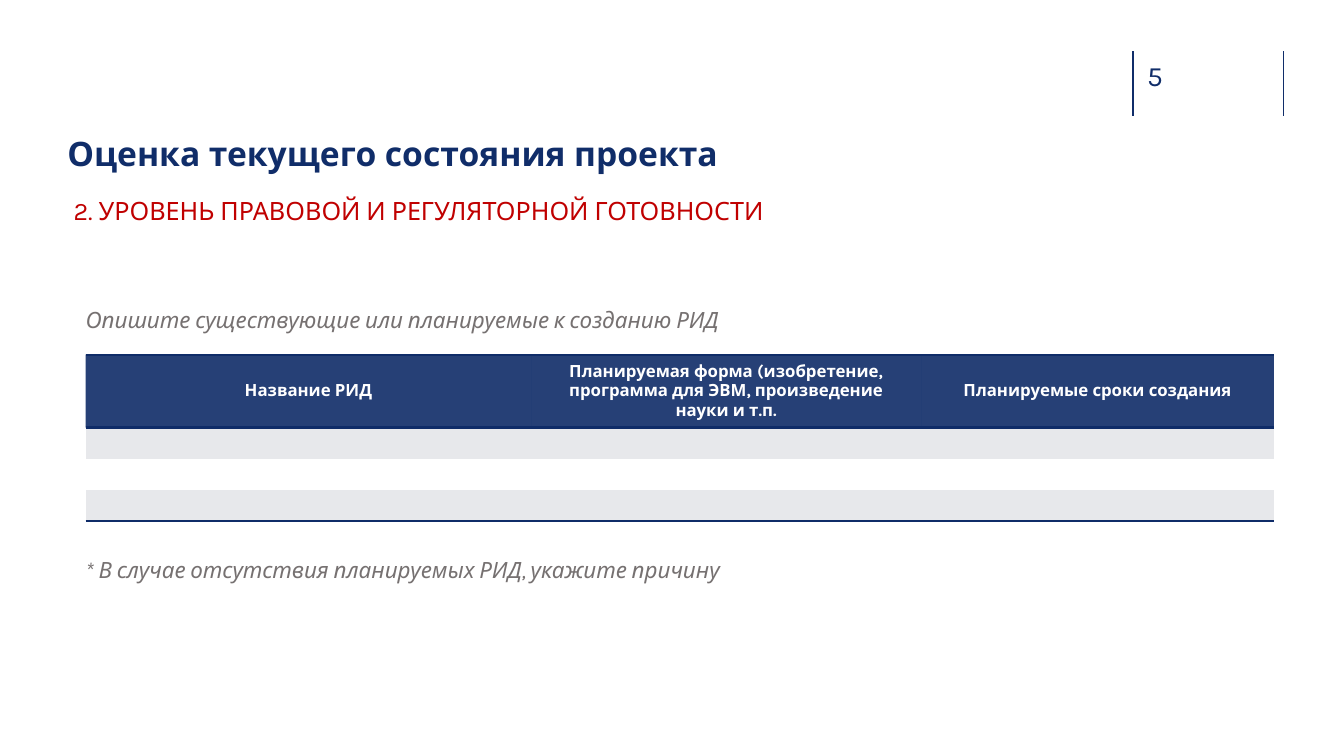
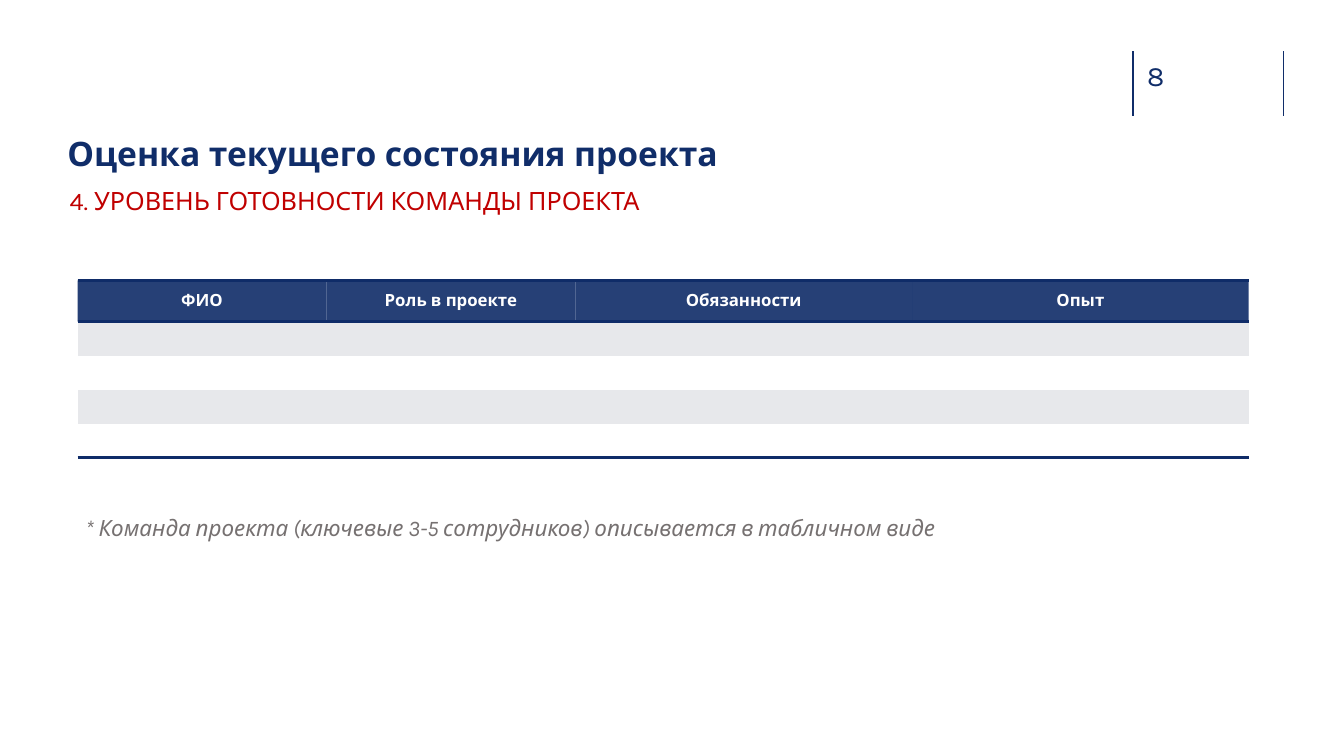
import lxml.etree
import pptx
import pptx.dml.color
import pptx.enum.shapes
import pptx.enum.text
import pptx.oxml.ns
import pptx.util

Pt = pptx.util.Pt
qn = pptx.oxml.ns.qn
ALIGN = pptx.enum.text.PP_ALIGN
ANCHOR = pptx.enum.text.MSO_ANCHOR

FONT = "Karla"
NAVY, HEADER_BLUE, RED = "102D69", "0F2C68", "C00000"
GREY, BAND, WHITE = "767171", "E7E8EB", "FFFFFF"
NO_TABLE_STYLE = "{2D5ABB26-0587-4C30-8999-92F81FD0307C}"
HEADING = "Оценка текущего состояния проекта"

# Boxes are left, top, width, height; each text ends with its inset
SLIDES = [
    {
        "number": "5",
        "section": ("2. УРОВЕНЬ ПРАВОВОЙ И РЕГУЛЯТОРНОЙ ГОТОВНОСТИ", (46.8, 134, 524, 33), 5.76),
        "notes": [
            ("Опишите существующие или планируемые к созданию РИД", (55.4, 213, 837, 31)),
            ("* В случае отсутствия планируемых РИД, укажите причину", (55.4, 391, 830, 31)),
        ],
        "columns": [
            ("Название РИД", 318.2),
            ("Планируемая форма (изобретение, программа для ЭВМ, произведение науки и т.п.", 278.6),
            ("Планируемые сроки создания", 252),
        ],
        "table_corner": (61.2, 253.4),
        "row_heights": [52] + [22.3] * 3,
    },
    {
        "number": "8",
        "section": ("4. УРОВЕНЬ ГОТОВНОСТИ КОМАНДЫ ПРОЕКТА", (49.7, 132.5, 690, 21.6), 0),
        "notes": [
            ("* Команда проекта (ключевые 3-5 сотрудников) описывается в табличном виде",
             (55.4, 361.4, 621, 31)),
        ],
        "columns": [("ФИО", 177.8), ("Роль в проекте", 177.8), ("Обязанности", 240.5), ("Опыт", 240.5)],
        "table_corner": (55.4, 200.2),
        "row_heights": [29.5] + [24.3] * 4,
    },
]


def rgb(color):
    return pptx.dml.color.RGBColor.from_string(color)


def write(shape, text, box, inset, size, color, bold=False, italic=False, anchor=ANCHOR.MIDDLE):
    """Place a text shape and fill it with one formatted paragraph."""
    shape.left, shape.top, shape.width, shape.height = map(Pt, box)
    frame = shape.text_frame
    frame.text = text
    frame.word_wrap = True
    frame.auto_size = pptx.enum.text.MSO_AUTO_SIZE.NONE
    frame.vertical_anchor = anchor
    frame.margin_left = frame.margin_right = Pt(inset)
    frame.margin_top = frame.margin_bottom = Pt(inset)
    paragraph = frame.paragraphs[0]
    paragraph.alignment = ALIGN.LEFT
    font = paragraph.runs[0].font
    font.name, font.size, font.bold, font.italic = FONT, Pt(size), bold, italic
    font.color.rgb = rgb(color)


deck = pptx.Presentation()
deck.slide_width, deck.slide_height = Pt(960), Pt(540)

for content in SLIDES:
    slide = deck.slides.add_slide(deck.slide_layouts[5])
    shapes = slide.shapes

    # Page number between two vertical rules
    for x, weight in ((809.3, 1.5), (916.6, 1)):
        rule = shapes.add_connector(
            pptx.enum.shapes.MSO_CONNECTOR.STRAIGHT, Pt(x), Pt(36.7), Pt(x), Pt(82.8))
        rule.line.color.rgb = rgb(NAVY)
        rule.line.width = Pt(weight)
        lxml.etree.SubElement(rule._element.spPr, qn("a:effectLst"))
    write(shapes.add_textbox(0, 0, 0, 0), content["number"], (819.4, 41.8, 52.6, 24.5),
          0, 20, NAVY, anchor=ANCHOR.TOP)

    # Heading, section name and notes
    write(shapes.title, HEADING, (40.9, 91.4, 797.8, 36), 7.2, 24, NAVY, bold=True)
    section, section_box, section_inset = content["section"]
    write(shapes.add_textbox(0, 0, 0, 0), section, section_box, section_inset, 18, RED)
    for note, note_box in content["notes"]:
        write(shapes.add_textbox(0, 0, 0, 0), note, note_box, 5.76, 16, GREY, italic=True)

    # Table to be filled in
    columns, row_heights = content["columns"], content["row_heights"]
    left, top = content["table_corner"]
    table = shapes.add_table(
        len(row_heights), len(columns), Pt(left), Pt(top),
        Pt(sum(width for _, width in columns)), Pt(sum(row_heights))).table
    table.first_row = table.horz_banding = False
    table._tbl.tblPr.find(qn("a:tableStyleId")).text = NO_TABLE_STYLE
    for column, (_, width) in zip(table.columns, columns):
        column.width = Pt(width)

    for r, height in enumerate(row_heights):
        table.rows[r].height = Pt(height)
        for c, (caption, _) in enumerate(columns):
            cell = table.cell(r, c)
            cell.vertical_anchor = ANCHOR.MIDDLE
            paragraph = cell.text_frame.paragraphs[0]
            properties = cell._tc.get_or_add_tcPr()
            cell.fill.solid()
            if r == 0:
                cell.fill.fore_color.rgb = rgb(HEADER_BLUE)
                fill_color = properties.find(qn("a:solidFill")).find(qn("a:srgbClr"))
                lxml.etree.SubElement(fill_color, qn("a:alpha"), val="90000")
                paragraph.text = caption
                paragraph.alignment = ALIGN.CENTER
                font = paragraph.runs[0].font
                font.name, font.size, font.bold = FONT, Pt(12), True
                font.color.rgb = rgb(WHITE)
                edges = ["a:lnT", "a:lnB"]
            else:
                cell.fill.fore_color.rgb = rgb(BAND if r % 2 else WHITE)
                lxml.etree.SubElement(paragraph._p, qn("a:endParaRPr"), sz="1000")
                edges = ["a:lnB"] if r == len(row_heights) - 1 else []
            for position, edge in enumerate(edges):
                border = lxml.etree.Element(qn(edge), w=str(Pt(2)))
                border_fill = lxml.etree.SubElement(border, qn("a:solidFill"))
                lxml.etree.SubElement(border_fill, qn("a:srgbClr"), val=HEADER_BLUE)
                properties.insert(position, border)

deck.save("out.pptx")
